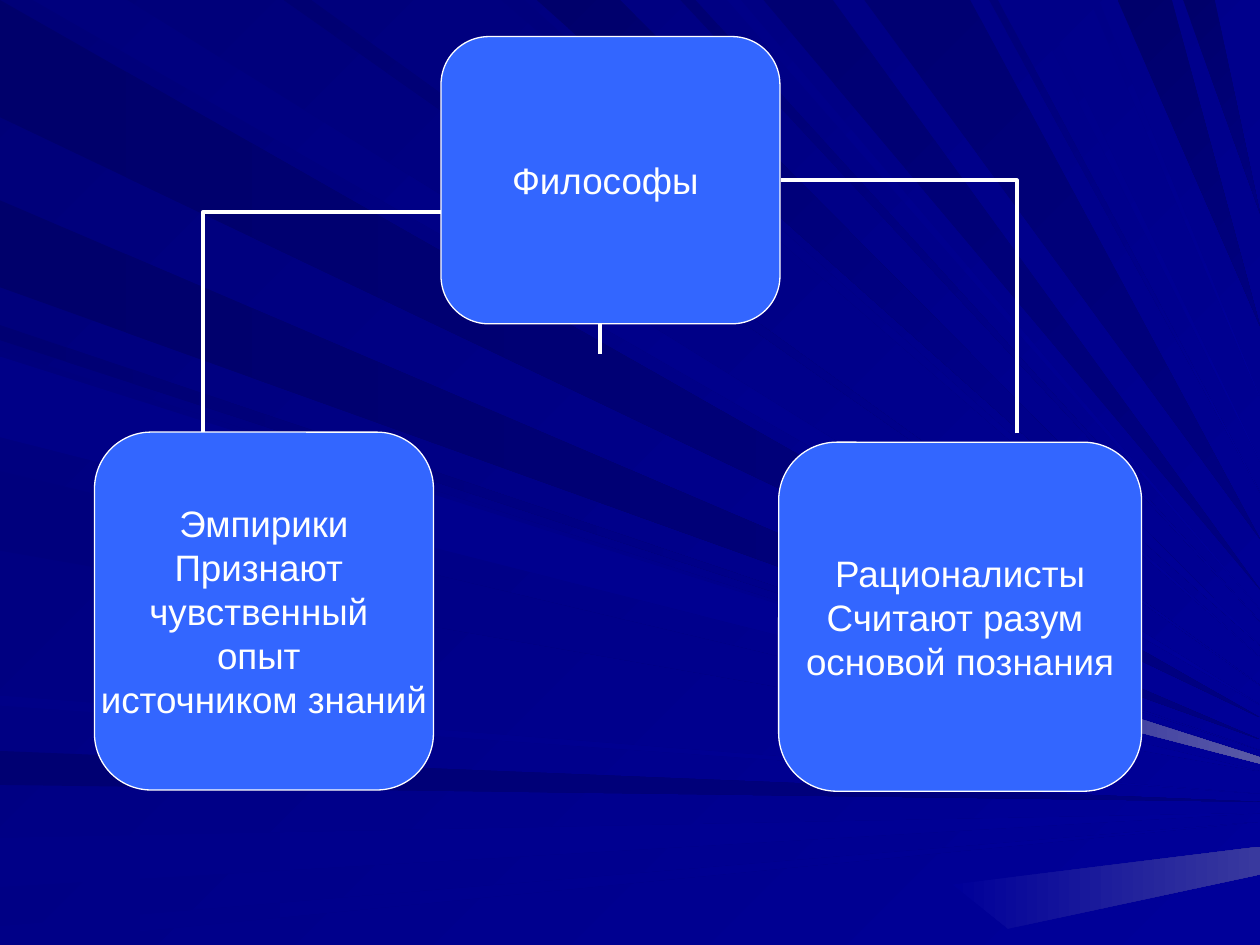
import pptx
import pptx.dml.color
import pptx.enum.shapes
import pptx.enum.text
import pptx.oxml
import pptx.oxml.ns
import pptx.util

Inches = pptx.util.Inches
Pt = pptx.util.Pt

COLORS = {
    "white": "FFFFFF", "box": "3366FF", "glow": "5A5AA6", "dim glow": "39399E",
    "night": "00006B", "deep": "000072", "base": "000078", "mid": "00007D",
    "navy": "000080", "bright": "000087", "royal": "000099",
}
FOCUS = (11.35, 6.4)

# Rays: start and end on the slide's edge, first and last colour.
# Positive places run along the top edge, negative ones down the left edge.
RAYS = [
    (0, -0.93, "night", "navy"),
    (0.26, 1.01, "mid", "royal"),
    (-5.96, -6.23, "deep", "navy"),
    (-6.65, -7.04, "bright", "royal"),
    (-7.35, -7.5, "bright", "royal"),
    (-2.58, -2.7, "deep", "royal"),
    (-1.59, -2.28, "night", "navy"),
    (3.98, 4.16, "mid", "royal"),
    (4.26, 4.92, "night", "royal"),
    (5.4, 5.52, "deep", "royal"),
    (6.06, 6.61, "deep", "navy"),
    (8.87, 9.3, "night", "navy"),
    (9.39, 9.64, "night", "navy"),
    (-2.78, -3.42, "mid", "royal"),
    (-3.74, -4.37, "mid", "royal"),
    (-5.52, -5.6, "bright", "royal"),
    (2.25, 2.47, "deep", "royal"),
    (5.77, 5.88, "bright", "royal"),
    (6.86, 7.7, "deep", "navy"),
    (7.85, 7.92, "base", "royal"),
    (8.15, 8.24, "bright", "royal"),
    (8.65, 8.72, "bright", "royal"),
    (-2.83, -3.47, "bright", "royal"),
]

GLOWS = [
    ("dim glow", [(7.56, 7.02), (10, 6.72), (10, 6.94), (8, 7.37)]),
    ("glow", [(6.37, 4.85), (10, 6.01), (10, 6.06), (6.33, 5.11)]),
]

BOXES = [
    (3.5, 0.29, 2.69, 2.28, ["Философы "]),
    (0.75, 3.43, 2.69, 2.84, ["Эмпирики", "Признают ", "чувственный ", "опыт ",
                              "источником знаний"]),
    (6.18, 3.51, 2.88, 2.77, ["Рационалисты", "Считают разум ", "основой познания"]),
]


def rgb(name):
    return pptx.dml.color.RGBColor.from_string(COLORS[name])


def paint(fill, first, last, angle):
    """Fill with a two-stop gradient at a clockwise angle."""
    fill.gradient()
    fill.gradient_angle = -angle % 360
    for stop, name, position in zip(fill.gradient_stops, (first, last), (0, 1)):
        stop.color.rgb = rgb(name)
        stop.position = position


def add_polygon(s, corners, first, last, angle):
    points = [(Inches(x), Inches(y)) for x, y in corners]
    builder = s.shapes.build_freeform(*points[0])
    builder.add_line_segments(points[1:], close=True)
    sp = builder.convert_to_shape()
    sp.shadow.inherit = False
    sp.line.fill.background()
    paint(sp.fill, first, last, angle)


def add_ray(s, start, end, first, last):
    """Wedge from the slide's edge towards the focus, ending at the right edge."""
    near, far = [(max(t, 0), max(-t, 0)) for t in (start, end)]
    x, y = (near[0] + far[0]) / 2, (near[1] + far[1]) / 2
    tip = y + (FOCUS[1] - y) * (10 - x) / (FOCUS[0] - x)
    add_polygon(s, [near, far, (10, tip)], first, last, 45 if end > 0 else 0)


def add_elbow(s, preset, start, end, bend=None):
    """Bent line that leaves start upwards; the preset is turned a quarter."""
    (x1, y1), (x2, y2) = start, end
    cx, cy = (x1 + x2) / 2, (y1 + y2) / 2
    half_w, half_h = abs(y2 - y1) / 2, abs(x2 - x1) / 2
    side = 1 if x2 > x1 else -1
    c = s.shapes.add_connector(
        pptx.enum.shapes.MSO_CONNECTOR.ELBOW,
        Inches(cx - side * half_w), Inches(cy - half_h),
        Inches(cx + side * half_w), Inches(cy + half_h))
    c.line.color.rgb = rgb("white")
    c.line.width = Pt(2.25)
    props = c._element.spPr
    props.xfrm.set("rot", str((270 if side > 0 else 90) * 60000))
    geom = props.find(pptx.oxml.ns.qn("a:prstGeom"))
    geom.set("prst", preset)
    if bend is not None:
        guide = pptx.oxml.parse_xml(
            f'<a:gd {pptx.oxml.ns.nsdecls("a")} name="adj1" fmla="val {round(bend * 100000)}"/>')
        geom.find(pptx.oxml.ns.qn("a:avLst")).append(guide)
    props.append(pptx.oxml.parse_xml(f'<a:effectLst {pptx.oxml.ns.nsdecls("a")}/>'))


def add_box(s, left, top, width, height, lines):
    sp = s.shapes.add_shape(pptx.enum.shapes.MSO_SHAPE.ROUNDED_RECTANGLE,
                            Inches(left), Inches(top), Inches(width), Inches(height))
    sp.shadow.inherit = False
    sp.fill.solid()
    sp.fill.fore_color.rgb = rgb("box")
    sp.line.color.rgb = rgb("white")
    sp.line.width = Pt(0.75)
    tf = sp.text_frame
    tf.word_wrap = False
    tf.vertical_anchor = pptx.enum.text.MSO_ANCHOR.MIDDLE
    tf.margin_left = tf.margin_right = tf.margin_top = tf.margin_bottom = 0
    for i, line in enumerate(lines):
        p = tf.add_paragraph() if i else tf.paragraphs[0]
        p.alignment = pptx.enum.text.PP_ALIGN.CENTER
        r = p.add_run()
        r.text = line
        r.font.name = "Arial"
        r.font.size = Pt(21)
        r.font.color.rgb = rgb("white")


def main():
    prs = pptx.Presentation()
    prs.slide_width, prs.slide_height = Inches(10), Inches(7.5)
    s = prs.slides.add_slide(prs.slide_layouts[6])
    paint(s.background.fill, "base", "royal", 45)
    for ray in RAYS:
        add_ray(s, *ray)
    for glow, corners in GLOWS:
        add_polygon(s, corners, "royal", glow, 0)
    add_elbow(s, "bentConnector2", (8.07, 3.44), (6.2, 1.43))
    add_elbow(s, "bentConnector3", (1.61, 4.22), (4.76, 2.81), bend=1.8)
    for box in BOXES:
        add_box(s, *box)
    prs.save("out.pptx")


if __name__ == "__main__":
    main()
